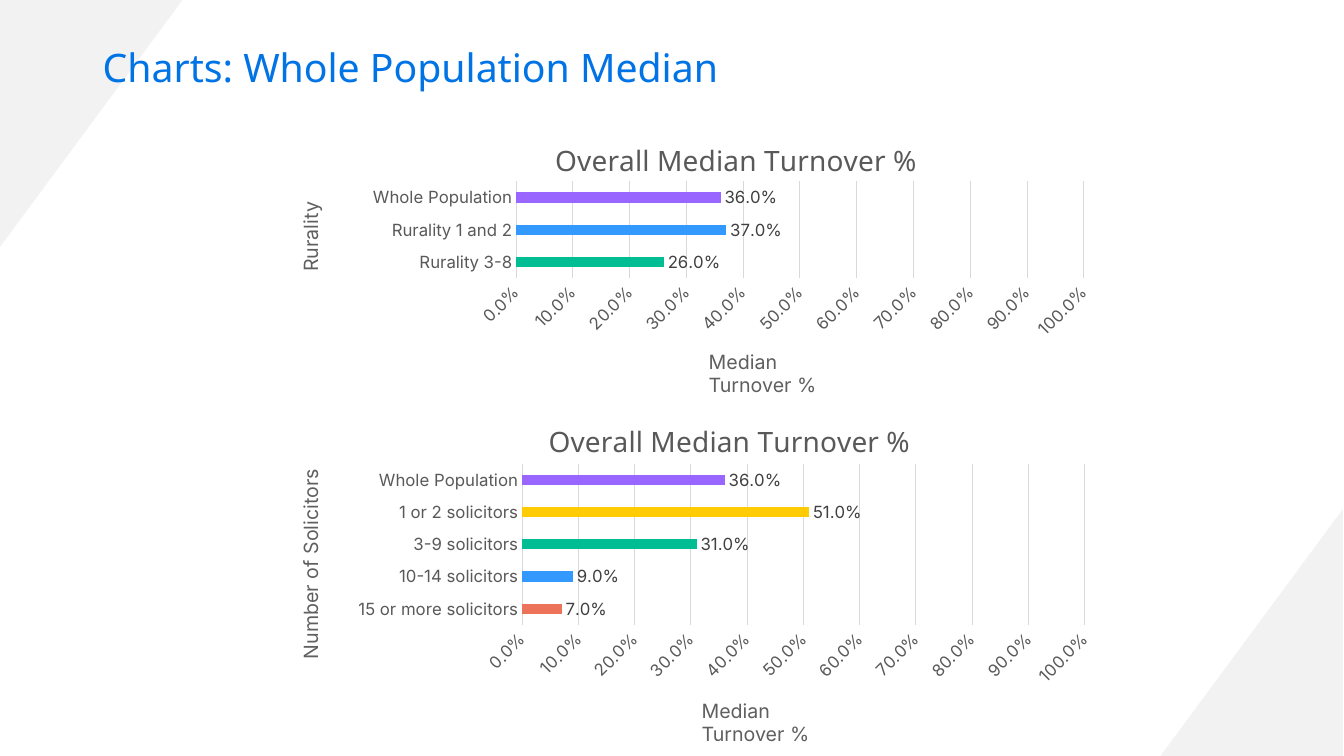
from lxml.etree import SubElement
from pptx import Presentation
from pptx.chart.data import CategoryChartData
from pptx.dml.color import RGBColor
from pptx.enum.chart import XL_CHART_TYPE, XL_LABEL_POSITION, XL_TICK_MARK
from pptx.enum.shapes import MSO_SHAPE
from pptx.enum.text import MSO_ANCHOR, PP_ALIGN
from pptx.oxml.ns import qn
from pptx.util import Inches, Pt

HEADING_BLUE = RGBColor(0x00, 0x73, 0xE5)
CORNER_GREY = RGBColor(0xF2, 0xF2, 0xF2)
GRID_GREY = RGBColor(0xD9, 0xD9, 0xD9)
AXIS_GREY = RGBColor(0x59, 0x59, 0x59)
CAPTION_GREY = RGBColor(0x5F, 0x5F, 0x5F)
LABEL_GREY = RGBColor(0x40, 0x40, 0x40)
BLACK = RGBColor(0, 0, 0)
PURPLE = RGBColor(0x99, 0x66, 0xFF)
BLUE = RGBColor(0x33, 0x99, 0xFF)
GREEN = RGBColor(0x00, 0xBD, 0x94)
YELLOW = RGBColor(0xFF, 0xCB, 0x05)
CORAL = RGBColor(0xED, 0x72, 0x5A)

HEADING_FONT = "Noto Sans"
BODY_FONT = "Inter"
PERCENT = "0.0%"
CHART_TITLE_WIDTH = 3.6
CHART_TITLE_TOP = 0.16

# Bars run from the bottom of each chart to the top.
RURALITY_BARS = [
    ("Rurality 3-8", 0.26, GREEN),
    ("Rurality 1 and 2", 0.37, BLUE),
    ("Whole Population", 0.36, PURPLE),
]
SOLICITOR_BARS = [
    ("15 or more solicitors", 0.07, CORAL),
    ("10-14 solicitors", 0.09, BLUE),
    ("3-9 solicitors", 0.31, GREEN),
    ("1 or 2 solicitors", 0.51, YELLOW),
    ("Whole Population", 0.36, PURPLE),
]


def style_font(font, name, size, color):
    font.name = name
    font.size = Pt(size)
    font.bold = False
    font.color.rgb = color


def add_corner(slide, box, rotation):
    corner = slide.shapes.add_shape(MSO_SHAPE.RIGHT_TRIANGLE, *map(Inches, box))
    corner.rotation = rotation
    corner.shadow.inherit = False
    corner.fill.solid()
    corner.fill.fore_color.rgb = CORNER_GREY
    corner.line.fill.background()


def add_text(slide, box, text, font_name, size, color):
    shape = slide.shapes.add_textbox(*map(Inches, box))
    shape.text_frame.word_wrap = True
    paragraph = shape.text_frame.paragraphs[0]
    paragraph.text = text
    style_font(paragraph.runs[0].font, font_name, size, color)
    return shape


def add_heading(slide, box):
    heading = add_text(slide, box, "Charts: Whole Population Median",
                       HEADING_FONT, 28, HEADING_BLUE)
    heading.text_frame.vertical_anchor = MSO_ANCHOR.MIDDLE
    heading.text_frame.paragraphs[0].line_spacing = 0.9


def add_side_caption(slide, box, text):
    caption = add_text(slide, box, text, BODY_FONT, 14, CAPTION_GREY)
    caption.rotation = 270
    caption.text_frame.paragraphs[0].alignment = PP_ALIGN.CENTER


def set_layout(element, **fractions):
    """Place a chart part by fractions of the chart's size."""
    layout = element.find(qn("c:layout"))
    if layout is None:
        layout = SubElement(element, qn("c:layout"))
        text = element.find(qn("c:tx"))
        if text is not None:
            text.addnext(layout)
        else:
            element.insert(0, layout)
    manual = SubElement(layout, qn("c:manualLayout"))
    if "w" in fractions:
        SubElement(manual, qn("c:layoutTarget")).set("val", "inner")
    for axis in ("x", "y"):
        SubElement(manual, qn(f"c:{axis}Mode")).set("val", "edge")
    for name, value in fractions.items():
        SubElement(manual, qn(f"c:{name}")).set("val", f"{value:.4f}")


def style_axes(chart):
    for axis in (chart.category_axis, chart.value_axis):
        axis.major_tick_mark = XL_TICK_MARK.NONE
        axis.minor_tick_mark = XL_TICK_MARK.NONE
        style_font(axis.tick_labels.font, BODY_FONT, 12, AXIS_GREY)
    category_line = chart.category_axis.format.line
    category_line.color.rgb = GRID_GREY
    category_line.width = Pt(0.75)

    value_axis = chart.value_axis
    value_axis.minimum_scale = 0
    value_axis.maximum_scale = 1
    value_axis.major_unit = 0.1
    value_axis.format.line.fill.background()
    grid_line = value_axis.major_gridlines.format.line
    grid_line.color.rgb = GRID_GREY
    grid_line.width = Pt(0.75)
    value_axis.tick_labels.number_format = PERCENT
    value_axis.tick_labels.number_format_is_linked = False
    label_body = value_axis._element.find(qn("c:txPr")).find(qn("a:bodyPr"))
    label_body.set("rot", "-2700000")
    label_body.set("vert", "horz")


def style_bars(chart, bars):
    plot = chart.plots[0]
    plot.gap_width = 219
    plot.vary_by_categories = False
    for index, (_, _, color) in enumerate(bars):
        fill = plot.series[0].points[index].format.fill
        fill.solid()
        fill.fore_color.rgb = color
    plot.has_data_labels = True
    labels = plot.data_labels
    labels.show_value = True
    labels.position = XL_LABEL_POSITION.OUTSIDE_END
    labels.number_format = PERCENT
    labels.number_format_is_linked = False
    style_font(labels.font, BODY_FONT, 12, LABEL_GREY)


def add_turnover_chart(slide, box, plot_box, bars):
    """Fill box with a bar chart; plot_box is measured from its corner."""
    data = CategoryChartData(number_format=PERCENT)
    data.categories = [name for name, _, _ in bars]
    data.add_series("Series 1", [value for _, value, _ in bars])
    chart = slide.shapes.add_chart(
        XL_CHART_TYPE.BAR_CLUSTERED, *map(Inches, box), data).chart
    style_font(chart.font, BODY_FONT, 10, BLACK)
    chart.has_legend = False
    chart.has_title = True
    title_paragraph = chart.chart_title.text_frame.paragraphs[0]
    title_paragraph.text = "Overall Median Turnover %"
    style_font(title_paragraph.runs[0].font, HEADING_FONT, 20, AXIS_GREY)
    style_axes(chart)
    style_bars(chart, bars)

    _, _, width, height = box
    left, top, plot_width, plot_height = plot_box
    set_layout(chart.chart_title._element,
               x=(width - CHART_TITLE_WIDTH) / 2 / width,
               y=CHART_TITLE_TOP / height)
    set_layout(chart.plots[0]._element.getparent(),
               x=left / width, y=top / height,
               w=plot_width / width, h=plot_height / height)


def main():
    presentation = Presentation()
    presentation.slide_width = Inches(13.33)
    presentation.slide_height = Inches(7.5)
    slide = presentation.slides.add_slide(presentation.slide_layouts[6])

    add_corner(slide, (11.19, 5.37, 2.45, 1.81), 270)
    add_corner(slide, (-0.32, 0.32, 2.45, 1.81), 90)
    add_heading(slide, (0.92, 0.4, 10.43, 0.58))

    panels = [
        ((3.55, 1.16, 7.41, 2.24), (1.57, 0.64, 5.63, 0.96), RURALITY_BARS,
         (6.93, 3.42, 1.7, 0.34), "Rurality", (2.56, 2.21, 1, 0.28)),
        ((3.4, 3.94, 7.58, 2.92), (1.78, 0.66, 5.58, 1.6), SOLICITOR_BARS,
         (6.86, 6.88, 1.74, 0.44), "Number of Solicitors",
         (1.6, 5.45, 2.92, 0.29)),
    ]
    for chart_box, plot_box, bars, caption_box, side_text, side_box in panels:
        add_turnover_chart(slide, chart_box, plot_box, bars)
        add_text(slide, caption_box, "Median Turnover %",
                 BODY_FONT, 14, CAPTION_GREY)
        add_side_caption(slide, side_box, side_text)

    presentation.save("out.pptx")


if __name__ == "__main__":
    main()
